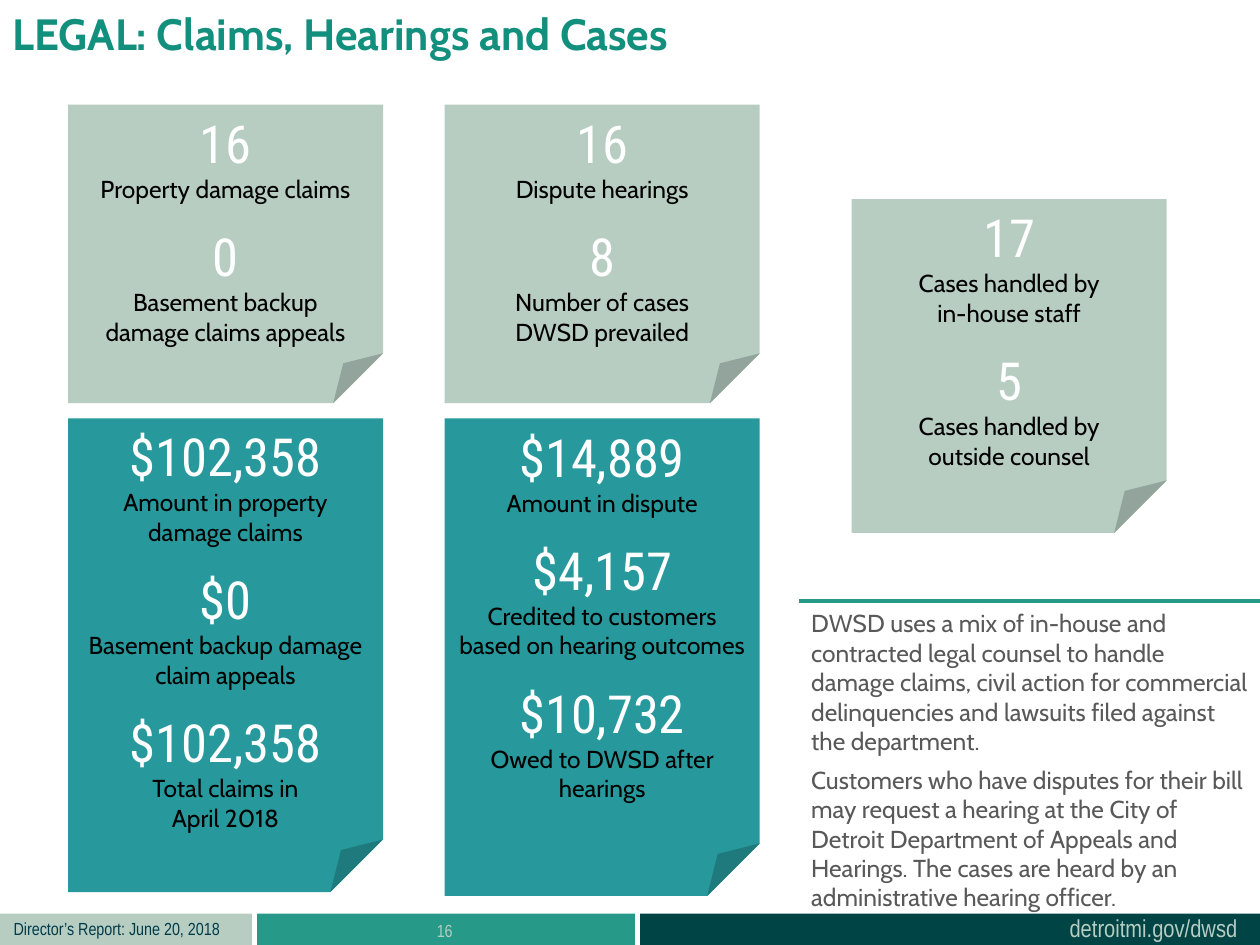
"""Build the legal claims, hearings and cases slide."""
from copy import deepcopy

from lxml import etree
from pptx import Presentation
from pptx import util as u
from pptx.dml.color import RGBColor
from pptx.enum import shapes, text
from pptx.oxml import ns

THEME = {
    "sage": RGBColor.from_string("B7CDC2"),
    "teal": RGBColor.from_string("27999D"),
    "green": RGBColor.from_string("279989"),
    "deep": RGBColor.from_string("004445"),
    "title": {"name": "Cabin", "size": u.Pt(25), "bold": True, "color": "138F7E"},
    "figure": {"name": "Roboto Condensed", "size": u.Pt(30), "color": "FFFFFF"},
    "label": {"name": "Cabin", "size": u.Pt(14), "color": "000000"},
    "note": {"name": "Cabin", "size": u.Pt(14), "color": "595959"},
    "date": {"name": "Arial Narrow", "size": u.Pt(10), "color": "003B49"},
    "page": {"name": "Arial Narrow", "size": u.Pt(10), "color": "B7CDC2"},
    "site": {"name": "Arial Narrow", "size": u.Pt(14), "color": "B7CDC2"},
}
LEFT, CENTER = text.PP_ALIGN.LEFT, text.PP_ALIGN.CENTER


def write(paragraph, words, style, align=LEFT, before=0):
    paragraph.text = words
    layout = {"alignment": align, "space_before": u.Pt(before), "line_spacing": 1.0}
    for key, value in layout.items():
        setattr(paragraph, key, value)
    for run in paragraph.runs:
        for key, value in THEME[style].items():
            if key == "color":
                run.font.color.rgb = RGBColor.from_string(value)
            else:
                setattr(run.font, key, value)
    for line_break in paragraph._p.findall(ns.qn("a:br")):
        line_break.append(deepcopy(paragraph.runs[0]._r.rPr))


def add_panel(kind, box, color):
    panel = slide.shapes.add_shape(kind, *map(u.Inches, box))
    panel.shadow.inherit = False
    panel.fill.solid()
    panel.fill.fore_color.rgb = THEME[color]
    panel.line.fill.background()
    return panel


deck = Presentation()
deck.slide_width, deck.slide_height = u.Inches(10), u.Inches(7.5)
slide = deck.slides.add_slide(deck.slide_layouts[5])

title = slide.shapes.title
title_box = {"left": 0, "top": 0, "width": 7.59, "height": 0.77}
for side, length in title_box.items():
    setattr(title, side, u.Inches(length))
title.text_frame.vertical_anchor = text.MSO_ANCHOR.TOP
title.text_frame.auto_size = text.MSO_AUTO_SIZE.NONE
write(title.text_frame.paragraphs[0], "LEGAL: Claims, Hearings and Cases", "title")

for left, width, color in [(2.04, 3, "green"), (5.08, 4.92, "deep"), (0, 2, "sage")]:
    add_panel(shapes.MSO_SHAPE.RECTANGLE, (left, 7.25, width, 0.25), color)

cards = [
    ((0.54, 0.83, 2.5, 2.37), "sage", [
        ("16", "Property damage claims"),
        ("0", "Basement backup\vdamage claims appeals")]),
    ((0.54, 3.32, 2.5, 3.76), "teal", [
        ("$102,358", "Amount in property\vdamage claims"),
        ("$0", "Basement backup damage claim appeals"),
        ("$102,358", "Total claims in\vApril 2018")]),
    ((3.53, 0.83, 2.5, 2.37), "sage", [
        ("16", "Dispute hearings"),
        ("8", "Number of cases\vDWSD prevailed")]),
    ((3.53, 3.32, 2.5, 3.79), "teal", [
        ("$14,889", "Amount in dispute"),
        ("$4,157", "Credited to customers based on hearing outcomes"),
        ("$10,732", "Owed to DWSD after hearings")]),
    ((6.76, 1.58, 2.5, 2.65), "sage", [
        ("17", "Cases handled by\vin-house staff"),
        ("5", "Cases handled by\voutside counsel")]),
]
for box, color, facts in cards:
    frame = add_panel(shapes.MSO_SHAPE.FOLDED_CORNER, box, color).text_frame
    frame.word_wrap = True
    frame.vertical_anchor = text.MSO_ANCHOR.TOP
    for index, (figure, label) in enumerate(facts):
        heading = frame.add_paragraph() if index else frame.paragraphs[0]
        write(heading, figure, "figure", CENTER, 12 if index else 0)
        write(frame.add_paragraph(), label, "label", CENTER)

captions = [
    ((8.39, 7.2, 1.55, 0.34), "detroitmi.gov/dwsd", "site", LEFT, False),
    ((0.01, 7.24, 1.84, 0.27), "Director’s Report: June 20, 2018", "date", LEFT, False),
    ((2.03, 7.25, 3, 0.4), "16", "page", CENTER, True),
    ((6.34, 4.78, 3.66, 1.28),
     "DWSD uses a mix of in-house and contracted legal counsel to handle damage claims, "
     "civil action for commercial delinquencies and lawsuits filed against the department.",
     "note", LEFT, True),
    ((6.34, 6.02, 3.66, 1.28),
     "Customers who have disputes for their bill may request a hearing at the City of "
     "Detroit Department of Appeals and Hearings. The cases are heard by an "
     "administrative hearing officer.", "note", LEFT, True),
]
for box, words, style, align, wrap in captions:
    frame = slide.shapes.add_textbox(*map(u.Inches, box)).text_frame
    frame.word_wrap = wrap
    write(frame.paragraphs[0], words, style, align)

divider = slide.shapes.add_connector(
    shapes.MSO_CONNECTOR.STRAIGHT, *map(u.Inches, (10, 4.77, 6.34, 4.77)))
divider.line.color.rgb = THEME["green"]
divider.line.width = u.Pt(2.25)
etree.SubElement(divider._element.spPr, ns.qn("a:effectLst"))

deck.save("out.pptx")
